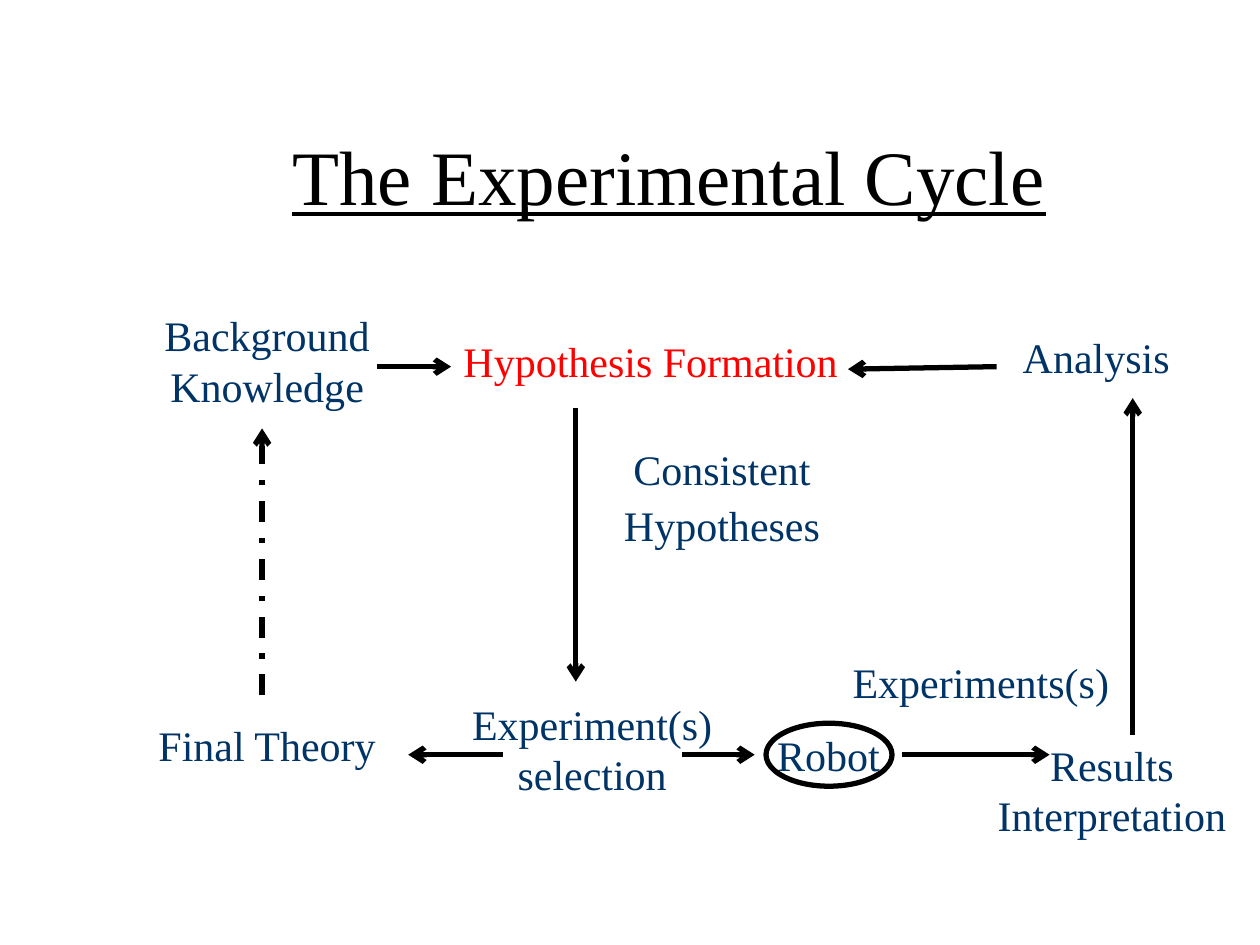
from dataclasses import dataclass

from lxml import etree
from pptx import Presentation
from pptx import util as u
from pptx.dml.color import RGBColor
from pptx.enum import dml, shapes, text
from pptx.oxml.ns import qn
from pptx.util import Inches


@dataclass(frozen=True)
class Theme:
    font: str = "Times New Roman"
    ink: RGBColor = RGBColor(0x00, 0x00, 0x00)
    label: RGBColor = RGBColor(0x00, 0x33, 0x66)
    focus: RGBColor = RGBColor(0xFF, 0x00, 0x00)
    title_size: int = 44
    label_size: int = 24
    line_width: int = 3


THEME = Theme()

# lines of text, box (left, top, width, height)
LABELS = [
    (["Background Knowledge"], (0.83, 2.41, 2.58, 0.9)),
    (["Analysis"], (7.66, 2.58, 2.08, 0.5)),
    (["Final Theory"], (0.91, 5.66, 2.42, 0.5)),
    (["Experiment(s) selection"], (3.24, 5.49, 2.92, 0.9)),
    (["Robot"], (5.66, 5.74, 1.83, 0.5)),
    (["Experiments(s)"], (6.66, 5.16, 2.25, 0.5)),
    (["Results", "Interpretation"], (7.65, 5.82, 2.35, 0.9)),
]

# start x, y, end x, y
ARROWS = {
    "hypothesis to selection": (4.57, 3.24, 4.57, 5.41),
    "analysis to hypothesis": (7.91, 2.91, 6.73, 2.93),
    "selection to theory": (3.99, 5.99, 3.24, 5.99),
    "knowledge to hypothesis": (2.99, 2.91, 3.58, 2.91),
    "selection to robot": (5.41, 5.99, 5.99, 5.99),
    "robot to results": (7.16, 5.99, 8.33, 5.99),
    "results to analysis": (8.99, 5.83, 8.99, 3.16),
}
FEEDBACK = (2.08, 5.52, 2.08, 3.4)


def add_label(s, lines, box, size=THEME.label_size, color=THEME.label,
              align=text.PP_ALIGN.CENTER, wrap=True, underline=None,
              spacing=None, gap=0):
    """Place one paragraph per line; gap is the space between paragraphs in points."""
    tf = s.shapes.add_textbox(*map(Inches, box)).text_frame
    tf.word_wrap = wrap
    tf.vertical_anchor = text.MSO_ANCHOR.MIDDLE
    for i, line in enumerate(lines):
        p = tf.add_paragraph() if i else tf.paragraphs[0]
        p.alignment = align
        if spacing:
            p.line_spacing = spacing
        if i:
            p.space_before = u.Pt(gap)
        r = p.add_run()
        r.text = line
        r.font.name = THEME.font
        r.font.size = u.Pt(size)
        r.font.color.rgb = color
        r.font.underline = underline


def style_line(line):
    line.color.rgb = THEME.ink
    line.width = u.Pt(THEME.line_width)


def add_arrow(s, ends, dash=None):
    c = s.shapes.add_connector(shapes.MSO_CONNECTOR.STRAIGHT, *map(Inches, ends))
    style_line(c.line)
    if dash:
        c.line.dash_style = dash
    sp_pr = c._element.spPr
    etree.SubElement(sp_pr.find(qn("a:ln")), qn("a:tailEnd"), type="arrow")
    etree.SubElement(sp_pr, qn("a:effectLst"))


def add_ring(s, box):
    ring = s.shapes.add_shape(shapes.MSO_SHAPE.OVAL, *map(Inches, box))
    ring.shadow.inherit = False
    ring.fill.background()
    style_line(ring.line)


def add_title(s, box):
    add_label(s, ["The Experimental Cycle"], box, size=THEME.title_size,
              color=THEME.ink, underline=True)


def add_cycle(s):
    for lines, box in LABELS:
        add_label(s, lines, box)
    add_label(s, ["Consistent", "Hypotheses"], (4.44, 3.56, 2.58, 0.86),
              spacing=0.7, gap=12)
    add_label(s, ["Hypothesis Formation"], (3.58, 2.61, 3.17, 0.5),
              color=THEME.focus, align=text.PP_ALIGN.LEFT, wrap=False)
    for ends in ARROWS.values():
        add_arrow(s, ends)
    add_arrow(s, FEEDBACK, dash=dml.MSO_LINE.DASH_DOT)
    add_ring(s, (6.08, 5.74, 1, 0.5))


def main():
    prs = Presentation()
    prs.slide_width, prs.slide_height = Inches(10), Inches(7.5)
    s = prs.slides.add_slide(prs.slide_layouts[6])
    add_title(s, (1.06, 0.76, 8.5, 1.25))
    add_cycle(s)
    prs.save("out.pptx")


if __name__ == "__main__":
    main()
